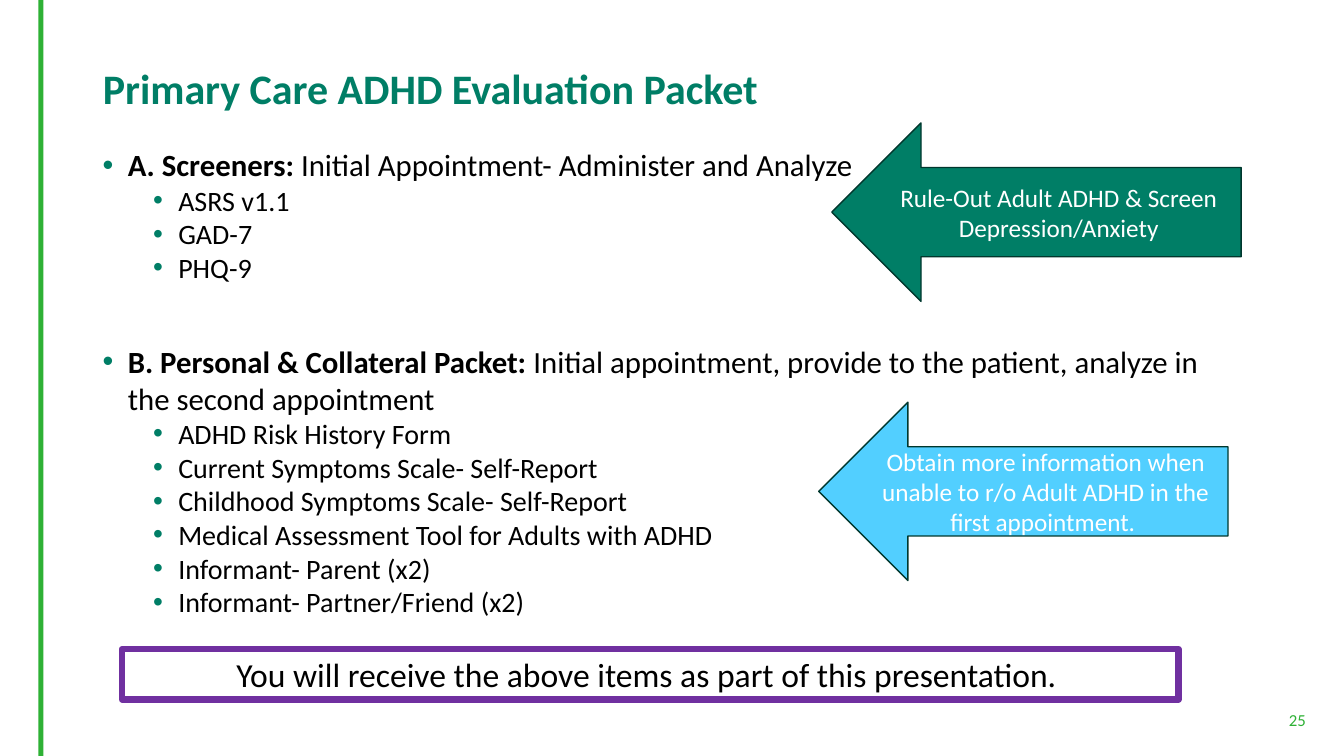
import pptx
import pptx.util
import pptx.dml.color
import pptx.enum.shapes
import pptx.enum.text
import lxml.etree
from dataclasses import dataclass

# Content
TITLE = "Primary Care ADHD Evaluation Packet"
SECTIONS = [
    ("A. Screeners: ", "Initial Appointment- Administer and Analyze",
     ["ASRS v1.1", "GAD-7", "PHQ-9"]),
    ("B. Personal & Collateral Packet: ",
     "Initial appointment, provide to the patient, analyze in the second appointment",
     ["ADHD Risk History Form", "Current Symptoms Scale- Self-Report",
      "Childhood Symptoms Scale- Self-Report",
      "Medical Assessment Tool for Adults with ADHD",
      "Informant- Parent (x2)", "Informant- Partner/Friend (x2)"]),
]
ARROWS = [  # text, left, top, fill
    ("Rule-Out Adult ADHD & Screen Depression/Anxiety", 825, 122, "007E66"),
    ("Obtain more information when unable to r/o Adult ADHD in the first appointment. ",
     812, 399, "52CFFF"),
]
NOTE = "You will receive the above items as part of this presentation. "
PAGE = "25"


@dataclass
class Theme:
    font: str = "Calibri"
    green: str = "007E66"
    lime: str = "2EB135"
    edge: str = "00372D"
    purple: str = "7030A0"
    black: str = "000000"
    white: str = "FFFFFF"
    title: int = 30
    head: int = 22
    item: int = 20
    arrow: int = 18
    note: int = 24
    page: int = 12
    section_gap: int = 42


T = Theme()
PX = 9144  # 100 px to the inch
ALIGN = pptx.enum.text.PP_ALIGN
ANCHOR = pptx.enum.text.MSO_ANCHOR
SHAPE = pptx.enum.shapes.MSO_SHAPE


def px(*values):
    return [pptx.util.Emu(v * PX) for v in values]


def rgb(value):
    return pptx.dml.color.RGBColor.from_string(value)


def style(p, size, color, bold=False):
    for r in p.runs:
        f = r.font
        f.name, f.size, f.bold = T.font, pptx.util.Pt(size), bold
        f.color.rgb = rgb(color)


def add_shape(kind, box, fill=None, line=None, width=1):
    sp = s.shapes.add_shape(kind, *px(*box))
    sp.shadow.inherit = False
    if fill:
        sp.fill.solid()
        sp.fill.fore_color.rgb = rgb(fill)
    else:
        sp.fill.background()
    if line:
        sp.line.color.rgb = rgb(line)
        sp.line.width = pptx.util.Pt(width)
    else:
        sp.line.fill.background()
    return sp


def write(sp, text, size, color, align, anchor):
    tf = sp.text_frame
    tf.word_wrap = True
    tf.vertical_anchor = anchor
    tf.text = text
    p = tf.paragraphs[0]
    p.alignment = align
    style(p, size, color)
    return p


def bullet(p, left):
    pPr = p._p.get_or_add_pPr()
    indent = 25 * PX
    pPr.set("marL", str(left * PX))
    pPr.set("indent", str(-indent))
    ns = pptx.oxml.ns.qn
    clr = lxml.etree.SubElement(pPr, ns("a:buClr"))
    lxml.etree.SubElement(clr, ns("a:srgbClr"), val=T.green)
    lxml.etree.SubElement(pPr, ns("a:buFont"), typeface="Arial")
    lxml.etree.SubElement(pPr, ns("a:buChar"), char="•")


prs = pptx.Presentation()
prs.slide_width, prs.slide_height = px(1333, 750)
s = prs.slides.add_slide(prs.slide_layouts[5])

# Side bar and title
add_shape(SHAPE.RECTANGLE, (38, 0, 5, 750), T.lime)
title = s.shapes.title
title.left, title.top, title.width, title.height = px(92, 40, 1150, 100)
p = write(title, TITLE, T.title, T.green, ALIGN.LEFT, ANCHOR.MIDDLE)
p.line_spacing = 0.9
style(p, T.title, T.green, True)

# Packet outline
tf = s.shapes.add_textbox(*px(92, 140, 1150, 490)).text_frame
tf.word_wrap = True
for i, (label, detail, items) in enumerate(SECTIONS):
    p = tf.add_paragraph() if i else tf.paragraphs[0]
    bullet(p, 25)
    if i:
        p.space_before = pptx.util.Pt(T.section_gap)
    for text in (label, detail):
        p.add_run().text = text
    style(p, T.head, T.black)
    p.runs[0].font.bold = True
    for item in items:
        p = tf.add_paragraph()
        p.level = 1
        bullet(p, 75)
        p.text = item
        style(p, T.item, T.black)

# Page number
number = s.shapes.add_textbox(*px(957, 699, 348, 30))
write(number, PAGE, T.page, T.lime, ALIGN.RIGHT, ANCHOR.BOTTOM)

# Arrows
for text, left, top, fill in ARROWS:
    sp = add_shape(SHAPE.LEFT_ARROW, (left, top, 406, 177), fill, T.edge)
    write(sp, text, T.arrow, T.white, ALIGN.CENTER, ANCHOR.MIDDLE)

# Framed note with rounded line joins
note = add_shape(SHAPE.RECTANGLE, (121, 644, 1048, 50), None, T.purple, 4.5)
lxml.etree.SubElement(note.line._get_or_add_ln(), pptx.oxml.ns.qn("a:round"))
write(note, NOTE, T.note, T.black, ALIGN.CENTER, ANCHOR.TOP)

prs.save("out.pptx")
